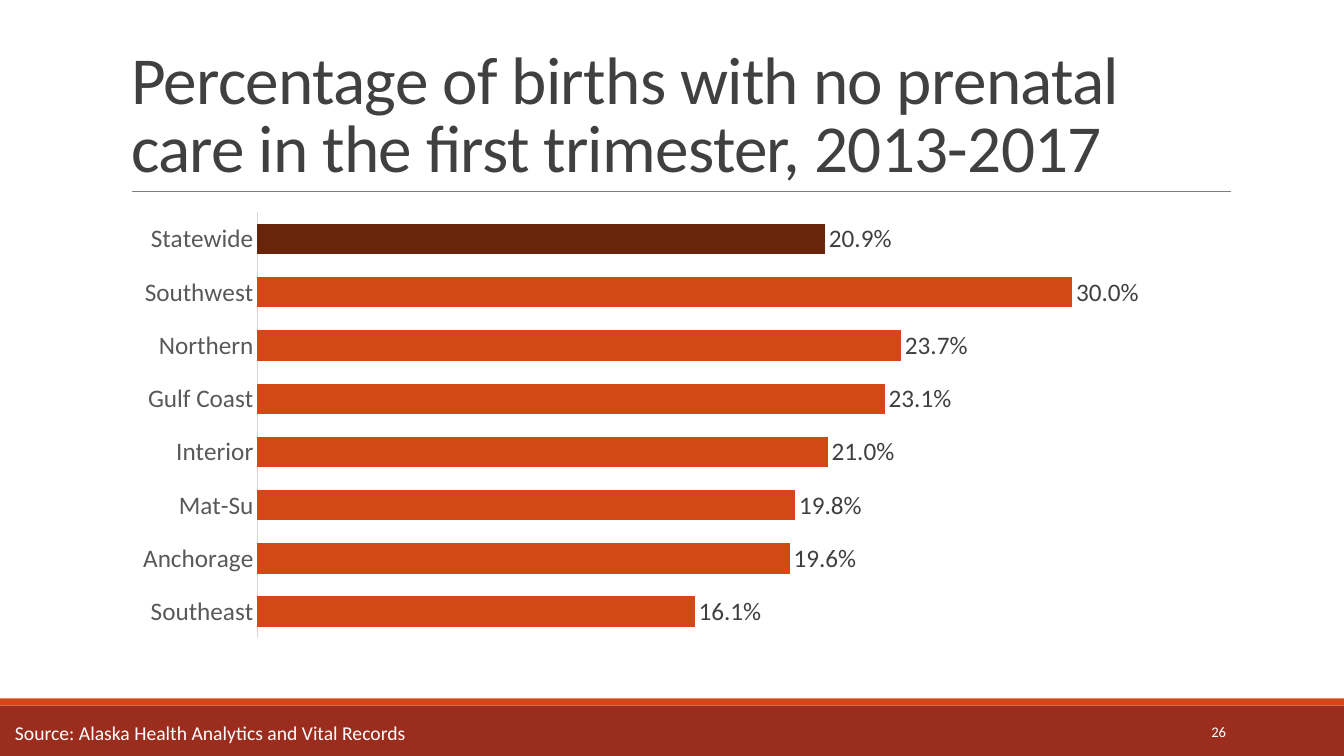
from dataclasses import dataclass

from lxml import etree
from pptx import Presentation
from pptx.chart.data import CategoryChartData
from pptx.dml.color import RGBColor
from pptx.enum.chart import XL_CHART_TYPE, XL_LABEL_POSITION, XL_TICK_LABEL_POSITION, XL_TICK_MARK
from pptx.enum.shapes import MSO_CONNECTOR, MSO_SHAPE
from pptx.enum.text import MSO_ANCHOR, MSO_AUTO_SIZE, PP_ALIGN
from pptx.oxml.ns import qn
from pptx.util import Inches, Pt

BAR_CLUSTERED = XL_CHART_TYPE.BAR_CLUSTERED
OUTSIDE_END = XL_LABEL_POSITION.OUTSIDE_END
NO_LABELS = XL_TICK_LABEL_POSITION.NONE
NO_TICKS = XL_TICK_MARK.NONE
RECTANGLE = MSO_SHAPE.RECTANGLE
STRAIGHT = MSO_CONNECTOR.STRAIGHT
MIDDLE, BOTTOM, TOP = MSO_ANCHOR.MIDDLE, MSO_ANCHOR.BOTTOM, MSO_ANCHOR.TOP
NO_AUTOFIT = MSO_AUTO_SIZE.NONE
LEFT, RIGHT = PP_ALIGN.LEFT, PP_ALIGN.RIGHT

FONT = "Calibri"
ORANGE, BROWN, RED = "D34817", "69240C", "9B2D1F"
WHITE, DARK_GRAY = "FFFFFF", "404040"
SLIDE_WIDTH = 13.33


@dataclass(frozen=True)
class Box:
    left: float
    top: float
    width: float
    height: float

    def lengths(self):
        return tuple(Inches(value) for value in (self.left, self.top, self.width, self.height))


@dataclass(frozen=True)
class Band:
    box: Box
    color: str


@dataclass(frozen=True)
class Region:
    name: str
    percent: float
    color: str = ORANGE


BANDS = [
    Band(Box(0, 7, SLIDE_WIDTH, 0.5), RED),
    Band(Box(0, 6.93, SLIDE_WIDTH, 0.07), ORANGE),
]
REGIONS = [
    Region("Southeast", 16.1),
    Region("Anchorage", 19.6),
    Region("Mat-Su", 19.8),
    Region("Interior", 21.0),
    Region("Gulf Coast", 23.1),
    Region("Northern", 23.7),
    Region("Southwest", 30.0),
    Region("Statewide", 20.9, BROWN),
]


def rgb(color: str) -> RGBColor:
    return RGBColor.from_string(color)


def format_font(font, size: float, color: str) -> None:
    font.name = FONT
    font.size = Pt(size)
    font.color.rgb = rgb(color)


def write_text(shape, text: str, *, size: float, color: str = WHITE, align=LEFT,
               anchor=TOP, wrap: bool = True, line_spacing: float = 1.0,
               character_spacing: float = 0) -> None:
    frame = shape.text_frame
    frame.auto_size = NO_AUTOFIT
    frame.word_wrap = wrap
    frame.vertical_anchor = anchor
    paragraph = frame.paragraphs[0]
    paragraph.alignment = align
    paragraph.line_spacing = line_spacing
    run = paragraph.add_run()
    run.text = text
    format_font(run.font, size, color)
    if character_spacing:
        run._r.get_or_add_rPr().set("spc", str(round(character_spacing * 100)))


def add_band(slide, band: Band) -> None:
    shape = slide.shapes.add_shape(RECTANGLE, *band.box.lengths())
    shape.shadow.inherit = False
    shape.fill.solid()
    shape.fill.fore_color.rgb = rgb(band.color)
    shape.line.fill.background()


def add_title(slide, text: str) -> None:
    title = slide.shapes.title
    title.left, title.top, title.width, title.height = Box(1.2, 0.31, 11, 1.59).lengths()
    write_text(title, text, size=48, color=DARK_GRAY, anchor=BOTTOM,
               line_spacing=0.85, character_spacing=-0.5)


def add_title_rule(slide) -> None:
    rule = slide.shapes.add_connector(
        STRAIGHT, Inches(1.31), Inches(1.9), Inches(12.21), Inches(1.9))
    rule.line.color.rgb = rgb("808080")
    rule.line.width = Pt(0.5)
    etree.SubElement(rule._element.spPr, qn("a:effectLst"))


def add_births_chart(slide, regions: list[Region]) -> None:
    data = CategoryChartData(number_format='0.0"%"')
    data.categories = [region.name for region in regions]
    data.add_series("Series 1", [region.percent for region in regions])
    chart = slide.shapes.add_chart(
        BAR_CLUSTERED, *Box(1.2, 2.02, 11, 4.4).lengths(), data).chart
    chart.has_legend = False
    chart.has_title = False
    format_font(chart.font, 18, "000000")

    category_axis = chart.category_axis
    category_axis.major_tick_mark = NO_TICKS
    category_axis.minor_tick_mark = NO_TICKS
    category_axis.format.line.color.rgb = rgb("D9D9D9")
    category_axis.format.line.width = Pt(0.75)
    format_font(category_axis.tick_labels.font, 18, "595959")

    value_axis = chart.value_axis
    value_axis.minimum_scale = 0
    value_axis.maximum_scale = 35
    value_axis.has_major_gridlines = False
    value_axis.tick_label_position = NO_LABELS
    value_axis.visible = False

    plot = chart.plots[0]
    plot.gap_width = 75
    plot.vary_by_categories = False
    series = plot.series[0]
    series.format.fill.solid()
    series.format.fill.fore_color.rgb = rgb(ORANGE)
    for index, region in enumerate(regions):
        if region.color != ORANGE:
            fill = series.points[index].format.fill
            fill.solid()
            fill.fore_color.rgb = rgb(region.color)

    labels = series.data_labels
    labels.show_value = True
    labels.position = OUTSIDE_END
    labels.number_format = '0.0"%"'
    labels.number_format_is_linked = False
    format_font(labels.font, 18, DARK_GRAY)


def main() -> None:
    presentation = Presentation()
    presentation.slide_width = Inches(SLIDE_WIDTH)
    presentation.slide_height = Inches(7.5)
    slide = presentation.slides.add_slide(presentation.slide_layouts.get_by_name("Title Only"))

    for band in BANDS:
        add_band(slide, band)
    add_title_rule(slide)
    add_title(slide, "Percentage of births with no prenatal care in the first trimester, 2013-2017")
    add_births_chart(slide, REGIONS)

    slide_number = slide.shapes.add_textbox(*Box(10.83, 7.06, 1.43, 0.4).lengths())
    write_text(slide_number, "26", size=10.5, align=RIGHT, anchor=MIDDLE)
    source = slide.shapes.add_textbox(*Box(0.05, 7.1, 4.12, 0.34).lengths())
    write_text(source, "Source: Alaska Health Analytics and Vital Records", size=14, wrap=False)

    presentation.save("out.pptx")


if __name__ == "__main__":
    main()
